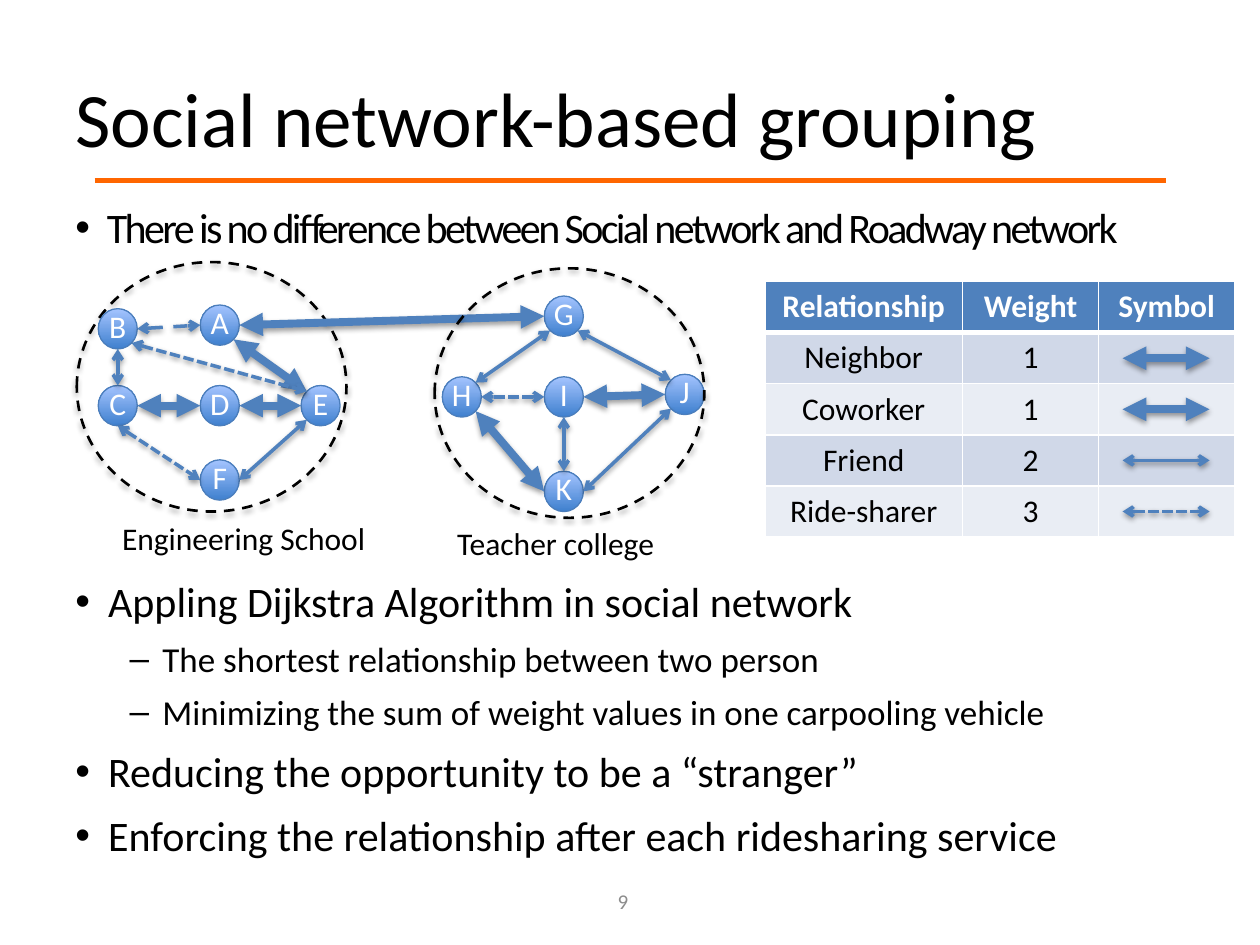
from math import sqrt

from lxml.etree import SubElement
from pptx import Presentation
from pptx.dml.color import RGBColor
from pptx.enum.dml import MSO_LINE as Dash
from pptx.enum.shapes import MSO_CONNECTOR as Link, MSO_SHAPE as Preset
from pptx.enum.text import MSO_ANCHOR as Anchor, PP_ALIGN as Align
from pptx.oxml.ns import qn
from pptx.util import Pt

BLUE, ORANGE, WHITE, BLACK = "4F81BD", "FF6600", "FFFFFF", "000000"
NODE_W, NODE_H = 22.32, 23.04
DIAGONAL = sqrt(0.5)
SITES = {
    "left": (-1, 0), "right": (1, 0), "top": (0, -1), "bottom": (0, 1),
    "top left": (-DIAGONAL, -DIAGONAL), "top right": (DIAGONAL, -DIAGONAL),
    "bottom left": (-DIAGONAL, DIAGONAL), "bottom right": (DIAGONAL, DIAGONAL),
}
PEOPLE = {
    "A": (125.6, 185.8), "B": (67.3, 187.9), "C": (67.3, 231.8), "D": (125.6, 231.8),
    "E": (183.2, 231.8), "F": (125.6, 274.3), "G": (322.2, 180.7), "H": (263.9, 226.8),
    "I": (322.2, 226.8), "J": (391.3, 225.4), "K": (322.2, 280.8),
}
CLOSE = {"width": 4.5, "arrow": "triangle"}
FRIEND = {"width": 2, "arrow": "arrow"}
RIDE = {"width": 2, "arrow": "arrow", "dash": Dash.SQUARE_DOT}
RIDE_LONG = {"width": 2, "arrow": "arrow", "dash": Dash.DASH}
TIES = [
    ("A", "bottom right", "E", "top left", CLOSE),
    ("B", "right", "A", "left", RIDE_LONG),
    ("C", "bottom", "F", "left", RIDE),
    ("D", "right", "E", "left", CLOSE),
    ("C", "right", "D", "left", CLOSE),
    ("A", "right", "G", "left", CLOSE),
    ("I", "right", "J", "left", CLOSE),
    ("H", "bottom right", "K", "left", CLOSE),
    ("G", "bottom right", "J", "top left", FRIEND),
    ("K", "right", "J", "bottom left", FRIEND),
    ("H", "top right", "G", "bottom left", FRIEND),
    ("F", "right", "E", "bottom left", FRIEND),
    ("I", "left", "H", "right", RIDE),
    ("I", "bottom", "K", "top", FRIEND),
    ("C", "top", "B", "bottom", FRIEND),
    ("B", "bottom right", "E", "top left", RIDE),
]
RELATIONSHIPS = [("Neighbor", "1", CLOSE), ("Coworker", "1", CLOSE),
                 ("Friend", "2", FRIEND), ("Ride-sharer", "3", RIDE)]
POINTS = [
    ("Appling Dijkstra Algorithm in social network", 0),
    ("The shortest relationship between two person", 1),
    ("Minimizing the sum of weight values in one carpooling vehicle", 1),
    ("Reducing the opportunity to be a “stranger”", 0),
    ("Enforcing the relationship after each ridesharing service", 0),
]


def rgb(value):
    """Turn a hex string into a colour."""
    return RGBColor.from_string(value)


def set_effects(shape, opacity=0, offset=0):
    """Replace the theme shadow by a soft drop shadow, or by none."""
    effects = SubElement(shape._element.spPr, qn("a:effectLst"))
    if opacity:
        shadow = SubElement(effects, qn("a:outerShdw"), blurRad=str(Pt(3.15)),
                            dist=str(Pt(offset)), dir="5400000", rotWithShape="0")
        color = SubElement(shadow, qn("a:srgbClr"), val=BLACK)
        SubElement(color, qn("a:alpha"), val=str(opacity * 1000))


def write(paragraph, text, size, color=BLACK, align=Align.LEFT, bold=False):
    """Write one formatted run into a paragraph."""
    paragraph.alignment = align
    run = paragraph.add_run()
    run.text = text
    run.font.color.rgb = rgb(color)
    for name, value in {"name": "Calibri", "size": Pt(size), "bold": bold}.items():
        setattr(run.font, name, value)
    return run


def add_frame(slide, left, top, width, height, anchor=Anchor.TOP):
    """Add an empty wrapping text box and return its text frame."""
    frame = slide.shapes.add_textbox(Pt(left), Pt(top), Pt(width), Pt(height)).text_frame
    frame.word_wrap = True
    frame.vertical_anchor = anchor
    return frame


def write_bullet(paragraph, text, level=0, indent=18.72):
    """Write a bulleted paragraph at the given level."""
    paragraph.level = level
    props = paragraph._p.get_or_add_pPr()
    props.set("marL", str(Pt(49.68 if level else indent)))
    props.set("indent", str(-Pt(indent)))
    SubElement(props, qn("a:buFont"), typeface="Arial")
    SubElement(props, qn("a:buChar"), char="–" if level else "•")
    return write(paragraph, text, 20 if level else 24)


def add_points(slide):
    """Add the list of conclusions under the networks."""
    frame = add_frame(slide, 36, 322.56, 637.2, 185.76)
    for index, (text, level) in enumerate(POINTS):
        paragraph = frame.add_paragraph() if index else frame.paragraphs[0]
        write_bullet(paragraph, text, level)
        paragraph.line_spacing = 1.1
        paragraph.space_before = Pt((4 if level else 4.8) if index else 0)


def add_line(slide, start, end, color, width):
    """Add a straight line between two points."""
    line = slide.shapes.add_connector(Link.STRAIGHT, *map(Pt, (*start, *end)))
    line.line.color.rgb = rgb(color)
    line.line.width = Pt(width)
    return line


def add_tie(slide, start, end, width, arrow, dash=None):
    """Add a two-headed relationship arrow."""
    tie = add_line(slide, start, end, BLUE, width)
    if dash:
        tie.line.dash_style = dash
    for tip in ("a:headEnd", "a:tailEnd"):
        SubElement(tie.line._ln, qn(tip), type=arrow)
    set_effects(tie, 38, 1.6)


def add_campus(slide, left, top):
    """Add the dashed outline around one school."""
    campus = slide.shapes.add_shape(Preset.OVAL, Pt(left), Pt(top), Pt(154.08), Pt(142.56))
    campus.fill.background()
    campus.line.color.rgb = rgb(BLACK)
    campus.line.width = Pt(1.5)
    campus.line.dash_style = Dash.DASH
    set_effects(campus, 35, 1.8)


def add_person(slide, name, x, y):
    """Add one person of the network, centred on a point."""
    person = slide.shapes.add_shape(Preset.OVAL, Pt(x - NODE_W / 2), Pt(y - NODE_H / 2),
                                    Pt(NODE_W), Pt(NODE_H))
    person.fill.gradient()
    person.fill.gradient_angle = 90
    for stop, color in zip(person.fill.gradient_stops, ("3F80CE", "A4C4FF")):
        stop.color.rgb = rgb(color)
    person.line.color.rgb = rgb("4B7EBC")
    person.line.width = Pt(0.75)
    set_effects(person)
    frame = person.text_frame
    insets = {"margin_left": 0, "margin_top": 3.6, "margin_right": 0, "margin_bottom": 7.2}
    for side, inset in insets.items():
        setattr(frame, side, Pt(inset))
    frame.vertical_anchor = Anchor.MIDDLE
    write(frame.paragraphs[0], name, 18, WHITE, Align.CENTER)


def site(name, side):
    """Find the point on a person's rim at the given side."""
    (x, y), (dx, dy) = PEOPLE[name], SITES[side]
    return x + dx * NODE_W / 2, y + dy * NODE_H / 2


def fill_cell(cell, text, fill, header):
    """Set the borders, fill and text of a table cell."""
    props = cell._tc.get_or_add_tcPr()
    for edge in "LRTB":
        width = 3 if header and edge == "B" else 1
        border = SubElement(props, qn(f"a:ln{edge}"), w=str(Pt(width)))
        SubElement(SubElement(border, qn("a:solidFill")), qn("a:srgbClr"), val=WHITE)
    cell.fill.solid()
    cell.fill.fore_color.rgb = rgb(fill)
    if text:
        write(cell.text_frame.paragraphs[0], text, 18, WHITE if header else BLACK,
              Align.CENTER, header)


def add_legend(slide):
    """Add the table of relationships with an arrow in each last cell."""
    left, top, row_height = 437.04, 160.9, 29.2
    rows = [("Relationship", "Weight", "Symbol")]
    rows += [(name, weight, "") for name, weight, _ in RELATIONSHIPS]
    table = slide.shapes.add_table(len(rows), 3, Pt(left), Pt(top), Pt(268.56),
                                   Pt(row_height * len(rows))).table
    for column, width in zip(table.columns, (113.04, 77.76, 77.76)):
        column.width = Pt(width)
    for r, texts in enumerate(rows):
        fill = ("D0D8E8" if r % 2 else "E9EDF4") if r else BLUE
        for c, text in enumerate(texts):
            fill_cell(table.cell(r, c), text, fill, r == 0)
    for r, (_, _, style) in enumerate(RELATIONSHIPS, 1):
        y = top + row_height * (r + 0.5)
        add_tie(slide, (641.5, y), (691.2, y), **style)


def main():
    """Build the slide and save it."""
    deck = Presentation()
    deck.slide_width, deck.slide_height = Pt(720), Pt(540)
    slide = deck.slides.add_slide(deck.slide_layouts[6])
    set_effects(add_line(slide, (54, 103), (666, 103), ORANGE, 3))
    add_campus(slide, 43.92, 149.76)
    title = add_frame(slide, 36, 21.6, 648, 90, Anchor.MIDDLE)
    write(title.paragraphs[0], "Social network-based grouping", 44)
    add_points(slide)
    claim = write_bullet(
        add_frame(slide, 36, 111.6, 648, 48.24).paragraphs[0],
        "There is no difference between Social network and Roadway network", indent=18)
    claim.font._element.set("spc", "-150")
    add_legend(slide)
    for name, center in PEOPLE.items():
        add_person(slide, name, *center)
    for first, first_side, second, second_side, style in TIES:
        add_tie(slide, site(first, first_side), site(second, second_side), **style)
    add_campus(slide, 248.4, 153.36)
    for school, left, top, width in (("Engineering School", 62.64, 293.04, 176.4),
                                     ("Teacher college", 254.16, 295.92, 136.08)):
        write(add_frame(slide, left, top, width, 28.8).paragraphs[0], school, 18)
    number = add_frame(slide, 272.16, 500.4, 167.76, 28.8, Anchor.MIDDLE)
    write(number.paragraphs[0], "9", 12, "8C8C8C", Align.CENTER)
    deck.save("out.pptx")


if __name__ == "__main__":
    main()
